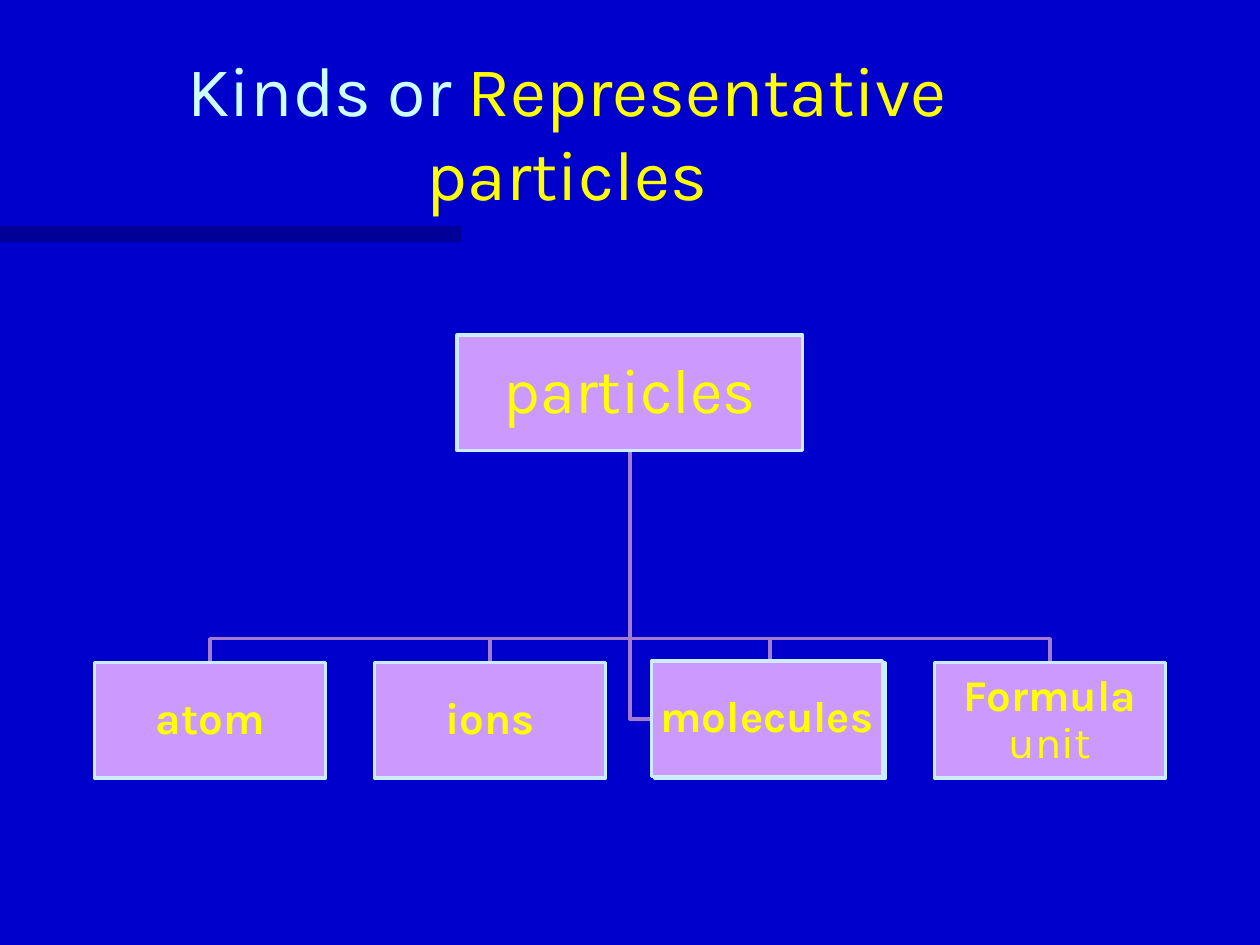
"""Build a slide with a tree of the kinds of representative particles."""
from pptx import Presentation
from pptx.dml.color import RGBColor
from pptx.enum import shapes, text
from pptx.oxml.ns import qn
from pptx.util import Pt
from lxml import etree

COLORS = {"background": "0000CC", "bar": "000066", "pale": "CCFFFF", "yellow": "FFFF00",
          "box": "CC99FF", "border": "CCECFF", "branch": "A37BCC"}
FONT = "Karla"
TITLE = [("Kinds or ", "pale"), ("Representative particles", "yellow")]
ROOT = [("particles", False)]
KINDS = [
    [("atom", True)],
    [("ions", True)],
    [],
    [("Formula", True), (" unit", False)],
]
ASSISTANT = [("molecules", True)]

CENTER = 360
BOX_HEIGHT = 66
ROOT_TOP, ROOT_WIDTH = 191.5, 197.5
KIND_TOP, KIND_WIDTH, KIND_STEP = 378.7, 132, 160
ASSISTANT_LEFT, ASSISTANT_TOP = 372.2, 377.7
JUNCTION = 365


def color(name):
    return RGBColor.from_string(COLORS[name])


def style_span(span, size, name, bold=False):
    span.font.name = FONT
    span.font.size = Pt(size)
    span.font.bold = bold
    span.font.color.rgb = color(name)


def add_rectangle(page, left, top, width, height, fill):
    box = page.shapes.add_shape(shapes.MSO_SHAPE.RECTANGLE,
                                Pt(left), Pt(top), Pt(width), Pt(height))
    box.shadow.inherit = False
    box.fill.solid()
    box.fill.fore_color.rgb = color(fill)
    box.line.fill.background()
    return box


def add_box(page, left, top, width, spans, size, inset):
    box = add_rectangle(page, left, top, width, BOX_HEIGHT, "box")
    box.line.color.rgb = color("border")
    box.line.width = Pt(2)
    frame = box.text_frame
    frame.word_wrap = True
    frame.vertical_anchor = text.MSO_ANCHOR.MIDDLE
    frame.margin_left = frame.margin_right = Pt(inset)
    frame.margin_top = frame.margin_bottom = Pt(inset)
    para = frame.paragraphs[0]
    para.alignment = text.PP_ALIGN.CENTER
    para.line_spacing = 0.9
    for words, bold in spans:
        span = para.add_run()
        span.text = words
        style_span(span, size, "yellow", bold)


def add_branch(page, points):
    start, *rest = [(Pt(x), Pt(y)) for x, y in points]
    builder = page.shapes.build_freeform(*start)
    builder.add_line_segments(rest, close=False)
    branch = builder.convert_to_shape()
    branch.shadow.inherit = False
    branch.fill.background()
    branch.line.color.rgb = color("branch")
    branch.line.width = Pt(2)


def add_title(page):
    title = page.shapes.title
    title.left, title.top, title.width, title.height = Pt(18), Pt(36), Pt(612), Pt(90)
    frame = title.text_frame
    frame.word_wrap = True
    frame.auto_size = text.MSO_AUTO_SIZE.NONE
    frame.vertical_anchor = text.MSO_ANCHOR.BOTTOM
    para = frame.paragraphs[0]
    para.alignment = text.PP_ALIGN.CENTER
    for words, name in TITLE:
        span = para.add_run()
        span.text = words
        style_span(span, 40, name)


def add_tree(page):
    root_bottom = ROOT_TOP + BOX_HEIGHT
    centers = [CENTER + (i - (len(KINDS) - 1) / 2) * KIND_STEP for i in range(len(KINDS))]
    assistant_middle = ASSISTANT_TOP + BOX_HEIGHT / 2
    add_branch(page, [(CENTER, root_bottom), (CENTER, assistant_middle),
                      (ASSISTANT_LEFT, assistant_middle)])
    for x in centers:
        add_branch(page, [(CENTER, root_bottom), (CENTER, JUNCTION),
                          (x, JUNCTION), (x, KIND_TOP)])
    add_box(page, CENTER - ROOT_WIDTH / 2, ROOT_TOP, ROOT_WIDTH, ROOT, 36, 2)
    for x, spans in zip(centers, KINDS):
        add_box(page, x - KIND_WIDTH / 2, KIND_TOP, KIND_WIDTH, spans, 25, 1.5)
    add_box(page, ASSISTANT_LEFT, ASSISTANT_TOP, KIND_WIDTH, ASSISTANT, 25, 1.5)


def main():
    deck = Presentation()
    deck.slide_width, deck.slide_height = Pt(720), Pt(540)
    page = deck.slides.add_slide(deck.slide_layouts[5])
    page.background.fill.solid()
    page.background.fill.fore_color.rgb = color("background")
    bar = add_rectangle(page, 0, 129, 263.5, 9.5, "bar")
    bar_color = bar.fill._xPr.find(qn("a:solidFill"))[0]
    etree.SubElement(bar_color, qn("a:alpha"), val="50000")
    add_title(page)
    add_tree(page)
    deck.save("out.pptx")


if __name__ == "__main__":
    main()
